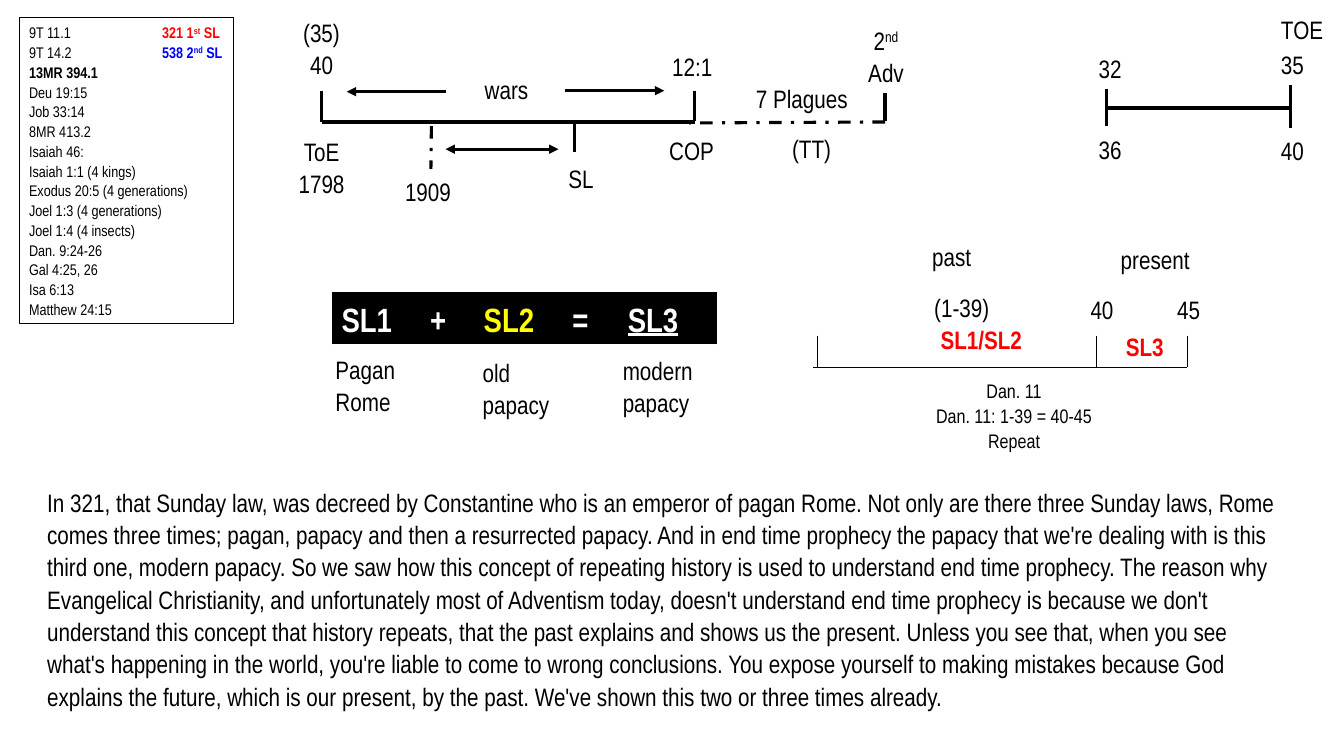
from dataclasses import dataclass

from lxml.etree import SubElement
from pptx import Presentation
from pptx.dml.color import RGBColor
from pptx.enum.dml import MSO_LINE
from pptx.enum.shapes import MSO_CONNECTOR, MSO_SHAPE
from pptx.enum.text import MSO_ANCHOR, MSO_AUTO_SIZE, PP_ALIGN
from pptx.oxml.ns import qn
from pptx.util import Inches, Pt

CELL = Inches(0.1)  # one column or row of the layout grid
COLUMNS, ROWS = 133.33, 75
FONT = "Arial Narrow"
LEADING = 1.07
COLORS = {"ink": "000000", "paper": "FFFFFF", "red": "FF0000", "blue": "0000FF", "yellow": "FFFF00"}
LEFT, CENTER = PP_ALIGN.LEFT, PP_ALIGN.CENTER


@dataclass
class Span:
    text: str
    color: str = ""
    bold: bool = False
    underline: bool = False
    raised: bool = False


REFERENCES = [
    ["9T 11.1\t", Span("321 1", "red", True), Span("st", "red", True, raised=True), Span(" SL", "red", True)],
    ["9T 14.2\t", Span("538 2", "blue", True), Span("nd", "blue", True, raised=True), Span(" SL", "blue", True)],
    [Span("13MR 394.1", bold=True)],
    "Deu 19:15", "Job 33:14", "8MR 413.2", "Isaiah 46:", "Isaiah 1:1 (4 kings)",
    "Exodus 20:5 (4 generations)", "Joel 1:3 (4 generations)", "Joel 1:4 (4 insects)",
    "Dan. 9:24-26", "Gal 4:25, 26", "Isa 6:13", "Matthew 24:15",
]

EQUATION = [Span("SL1\t+\t", bold=True), Span("SL2", "yellow", True),
            Span("\t=\t", bold=True), Span("SL3", bold=True, underline=True)]

SUMMARY = [
    "In 321, that Sunday law, was decreed by Constantine who is an emperor of pagan Rome.",
    "Not only are there three Sunday laws, Rome comes three times; pagan, papacy and then a resurrected papacy.",
    "And in end time prophecy the papacy that we're dealing with is this third one, modern papacy.",
    "So we saw how this concept of repeating history is used to understand end time prophecy.",
    "The reason why Evangelical Christianity, and unfortunately most of Adventism today, doesn't understand "
    "end time prophecy is because we don't understand this concept that history repeats, that the past "
    "explains and shows us the present.",
    "Unless you see that, when you see what's happening in the world, you're liable to come to wrong conclusions.",
    "You expose yourself to making mistakes because God explains the future, which is our present, by the past.",
    "We've shown this two or three times already.",
]

# text paragraphs, column, row, width in columns, alignment
LABELS = [
    (["ToE", "1798"], 28.4, 12.8, 7, CENTER),
    (["SL"], 55.4, 15.5, 5.1, LEFT),
    (["(35)", "40"], 28.4, 1, 7, CENTER),
    (["12:1"], 65.7, 4.4, 7, LEFT),
    (["7 Plagues"], 74, 7.6, 11.3, LEFT),
    (["wars"], 45.2, 6.7, 10.1, CENTER),
    (["1909"], 39.2, 16.8, 7, LEFT),
    (["COP"], 65.4, 12.7, 8.6, LEFT),
    (["(TT)"], 77.6, 12.5, 7, LEFT),
    (["32"], 108, 4.6, 7, LEFT),
    (["36"], 108, 12.6, 7, LEFT),
    (["35"], 126.1, 4.2, 7, LEFT),
    (["40"], 126.1, 12.7, 7, LEFT),
    (["TOE"], 126.1, 0.7, 7, LEFT),
    (["past"], 91.5, 23.2, 11.3, LEFT),
    (["present"], 110.2, 23.5, 11.3, LEFT),
    (["(1-39)", [Span("SL1/SL2", "red", True)]], 91.7, 28.3, 11.3, (LEFT, CENTER)),
    ([[Span("SL3", "red", True)]], 110.7, 32.2, 6.8, LEFT),
    (["40"], 107.2, 28.5, 5.1, LEFT),
    (["45"], 115.8, 28.5, 5.1, LEFT),
    (["Pagan", "Rome"], 32.3, 34.4, 11.3, LEFT),
    (["old", "papacy"], 46.9, 34.7, 11.3, LEFT),
    (["modern", "papacy"], 60.8, 34.5, 11.3, LEFT),
]


def grid(cells):
    return round(cells * CELL)


def rgb(name):
    return RGBColor.from_string(COLORS[name])


def add_tabs(para, stops):
    """Set left tab stops, given in columns from the text edge."""
    tabs = SubElement(para._p.get_or_add_pPr(), qn("a:tabLst"))
    for stop in stops:
        SubElement(tabs, qn("a:tab"), pos=str(grid(stop)), algn="l")


def write(box, paragraphs, size, align=LEFT, color="ink", tabs=()):
    """Fill a box with paragraphs; align is one value or one per paragraph."""
    frame = box.text_frame
    frame.word_wrap = True
    frame.auto_size = MSO_AUTO_SIZE.SHAPE_TO_FIT_TEXT
    frame.vertical_anchor = MSO_ANCHOR.TOP
    for index, content in enumerate(paragraphs):
        para = frame.add_paragraph() if index else frame.paragraphs[0]
        para.alignment = align[index] if isinstance(align, tuple) else align
        para.line_spacing = LEADING
        spans = [content] if isinstance(content, str) else content
        spans = [Span(span) if isinstance(span, str) else span for span in spans]
        if tabs and any("\t" in span.text for span in spans):
            add_tabs(para, tabs)
        para.font.name = FONT
        para.font.size = Pt(size)
        para.font.color.rgb = rgb(color)
        for span in spans:
            run = para.add_run()
            run.text = span.text
            if span.color:
                run.font.color.rgb = rgb(span.color)
            if span.bold:
                run.font.bold = True
            if span.underline:
                run.font.underline = True
            if span.raised:
                run.font._element.set("baseline", "30000")


def add_panel(page, paragraphs, column, row, width, size=18, align=LEFT,
              fill="paper", border="paper", color="ink", tabs=(), lines=None):
    """Add a filled rectangle as tall as its lines of text."""
    height = 1 + (lines or len(paragraphs)) * size * 1.2 * LEADING / 7.2
    box = page.shapes.add_shape(MSO_SHAPE.RECTANGLE, grid(column), grid(row), grid(width), grid(height))
    box.shadow.inherit = False
    box.fill.solid()
    box.fill.fore_color.rgb = rgb(fill)
    box.line.color.rgb = rgb(border)
    box.line.width = Pt(0.75)
    write(box, paragraphs, size, align, color, tabs)


def add_line(page, start, end, weight=2.25, dashed=False, arrows=()):
    line = page.shapes.add_connector(MSO_CONNECTOR.STRAIGHT, *map(grid, start + end))
    line.line.color.rgb = rgb("ink")
    line.line.width = Pt(weight)
    if dashed:
        line.line.dash_style = MSO_LINE.DASH_DOT
    for arrow in arrows:
        SubElement(line.line._get_or_add_ln(), qn(f"a:{arrow}"), type="triangle")
    SubElement(line._element.spPr, qn("a:effectLst"))


def add_timeline(page, start, end, row, weight, ticks, tick_weight=2.25):
    """Add a level axis with ticks given as (column, top, bottom)."""
    add_line(page, (start, row), (end, row), weight)
    for column, top, bottom in ticks:
        add_line(page, (column, top), (column, bottom), tick_weight)


def main():
    deck = Presentation()
    deck.slide_width, deck.slide_height = grid(COLUMNS), grid(ROWS)
    page = deck.slides.add_slide(deck.slide_layouts[6])

    add_panel(page, REFERENCES, 1.9, 1.7, 21.3, size=11, border="ink", tabs=[13.2])

    add_timeline(page, 31.9, 68.9, 12.1, 3,
                 [(31.9, 9, 12.1), (57, 12.1, 15.1), (68.9, 9, 12), (87.8, 9, 12)])
    add_line(page, (42.8, 12.5), (42.7, 20.9), dashed=True)
    add_line(page, (87.8, 12.1), (68.4, 12.2), dashed=True)
    add_line(page, (44.2, 9.1), (34.4, 9.1), arrows=["tailEnd"])
    add_line(page, (56.1, 9), (65.9, 9), arrows=["tailEnd"])
    add_line(page, (44.2, 14.8), (55.4, 14.8), arrows=["headEnd", "tailEnd"])
    add_timeline(page, 109.8, 128, 10.7, 3, [(109.8, 7.9, 14.2), (128, 7.8, 14.2)])
    add_timeline(page, 80.7, 117.8, 36.4, 0.5,
                 [(column, 33.3, 36.4) for column in (81.1, 108.8, 117.8)], 0.5)

    for paragraphs, column, row, width, align in LABELS:
        add_panel(page, paragraphs, column, row, width, align=align)
    add_panel(page, [["2", Span("nd", raised=True), " Adv"]], 84.4, 1.8, 7, align=CENTER, lines=2)
    add_panel(page, ["Dan. 11", "Dan. 11: 1-39 = 40-45", "Repeat"], 89.5, 36.9, 22.2, 14, CENTER)
    add_panel(page, [EQUATION], 32.9, 28.9, 38.3, 24, fill="ink", color="paper",
              tabs=[8.8, 14.1, 22.9, 28.4])

    summary = page.shapes.add_textbox(grid(3.7), grid(47.6), grid(124), grid(23.5))
    write(summary, [" ".join(SUMMARY)], 18)
    deck.save("out.pptx")


if __name__ == "__main__":
    main()
